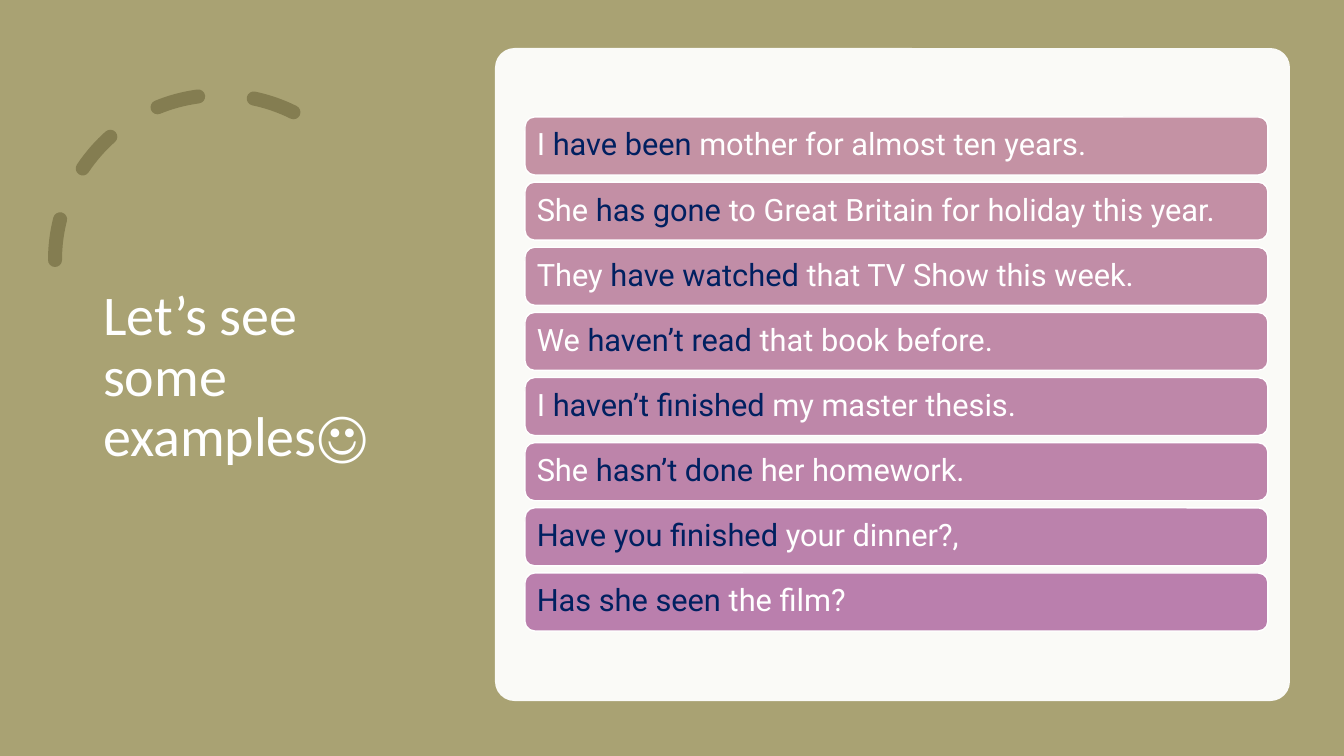
"""Build a slide of present perfect examples beside a title."""
from dataclasses import dataclass

import lxml.etree
import pptx
import pptx.dml.color
import pptx.enum.dml
import pptx.enum.shapes
import pptx.enum.text
import pptx.oxml.ns
import pptx.util

HEADING = "Let’s see some examples☺"
EXAMPLES = [
    ("I ", "have been ", "mother for almost ten years."),
    ("She ", "has gone ", "to Great Britain for holiday this year."),
    ("They ", "have watched ", "that TV Show this week."),
    ("We ", "haven’t read ", "that book before."),
    ("I ", "haven’t finished ", "my master thesis."),
    ("She ", "hasn’t done ", "her homework."),
    ("", "Have you finished ", "your dinner?,"),
    ("", "Has she seen ", "the film?"),
]

SLIDE_SIZE = (1344, 756)
HEADING_BOX = (93, 71, 326, 614)
ARC_BOX = (55, 95, 330, 330)
CARD_BOX = (495, 48, 795, 653)
BAR_LEFT, BAR_WIDTH, BAR_HEIGHT = 525, 743, 58
FIRST_BAR_TOP, LAST_BAR_TOP = 117, 573
BAR_INSET = 12
EMU_PER_PX = 914400 / 100.8


@dataclass(frozen=True)
class Theme:
    """Colours, fonts and type sizes of the slide."""
    backdrop: str = "A9A273"
    arc: str = "847D51"
    light: str = "FFFFFF"
    verb: str = "002060"
    first_bar: str = "C492A4"
    last_bar: str = "BA7FAD"
    heading_font: str = "Calibri"
    example_font: str = "Roboto"
    heading_size: int = 40
    example_size: int = 22
    line_spacing: float = 0.9


THEME = Theme()
SHAPES = pptx.enum.shapes.MSO_SHAPE


def px(length):
    return pptx.util.Emu(round(length * EMU_PER_PX))


def rgb(code):
    return pptx.dml.color.RGBColor.from_string(code)


def blend(start, end, share):
    pairs = zip(bytes.fromhex(start), bytes.fromhex(end))
    return bytes(round(a + (b - a) * share) for a, b in pairs).hex().upper()


def add_plain_shape(slide, kind, box, fill=None, outline=None, width=1):
    shape = slide.shapes.add_shape(kind, *map(px, box))
    shape.shadow.inherit = False
    if fill:
        shape.fill.solid()
        shape.fill.fore_color.rgb = rgb(fill)
    else:
        shape.fill.background()
    if outline:
        shape.line.color.rgb = rgb(outline)
        shape.line.width = pptx.util.Pt(width)
    else:
        shape.line.fill.background()
    return shape


def write_line(frame, pieces, font, size):
    frame.word_wrap = True
    frame.auto_size = pptx.enum.text.MSO_AUTO_SIZE.NONE
    frame.vertical_anchor = pptx.enum.text.MSO_ANCHOR.MIDDLE
    line = frame.paragraphs[0]
    line.alignment = pptx.enum.text.PP_ALIGN.LEFT
    line.line_spacing = THEME.line_spacing
    for words, color in pieces:
        if words:
            run = line.add_run()
            run.text = words
            run.font.name = font
            run.font.size = pptx.util.Pt(size)
            run.font.color.rgb = rgb(color)


def add_heading(slide):
    heading = slide.shapes.title
    heading.left, heading.top, heading.width, heading.height = map(px, HEADING_BOX)
    write_line(heading.text_frame, [(HEADING, THEME.light)],
               THEME.heading_font, THEME.heading_size)


def add_dashed_arc(slide):
    arc = add_plain_shape(slide, SHAPES.ARC, ARC_BOX, outline=THEME.arc, width=10)
    arc.adjustments[0], arc.adjustments[1] = 146.13, 0
    arc.line.dash_style = pptx.enum.dml.MSO_LINE.DASH
    properties = arc.element.spPr
    properties.xfrm.set("flipH", "1")
    outline = properties.find(pptx.oxml.ns.qn("a:ln"))
    outline.set("cap", "rnd")


def add_card(slide):
    card = add_plain_shape(slide, SHAPES.ROUNDED_RECTANGLE, CARD_BOX, THEME.light)
    card.adjustments[0] = 0.03
    color = card.element.spPr.find(".//" + pptx.oxml.ns.qn("a:srgbClr"))
    lxml.etree.SubElement(color, pptx.oxml.ns.qn("a:alpha"), val="95000")


def add_examples(slide):
    last = len(EXAMPLES) - 1
    for index, (subject, verb, rest) in enumerate(EXAMPLES):
        share = index / last
        top = FIRST_BAR_TOP + (LAST_BAR_TOP - FIRST_BAR_TOP) * share
        bar = add_plain_shape(
            slide, SHAPES.ROUNDED_RECTANGLE, (BAR_LEFT, top, BAR_WIDTH, BAR_HEIGHT),
            blend(THEME.first_bar, THEME.last_bar, share), THEME.light)
        frame = bar.text_frame
        frame.margin_left = frame.margin_right = px(BAR_INSET - 3)
        pieces = [(subject, THEME.light), (verb, THEME.verb), (rest, THEME.light)]
        write_line(frame, pieces, THEME.example_font, THEME.example_size)


def main():
    deck = pptx.Presentation()
    deck.slide_width, deck.slide_height = map(px, SLIDE_SIZE)
    slide = deck.slides.add_slide(deck.slide_layouts.get_by_name("Title Only"))
    slide.background.fill.solid()
    slide.background.fill.fore_color.rgb = rgb(THEME.backdrop)
    add_dashed_arc(slide)
    add_heading(slide)
    add_card(slide)
    add_examples(slide)
    deck.save("out.pptx")


if __name__ == "__main__":
    main()
